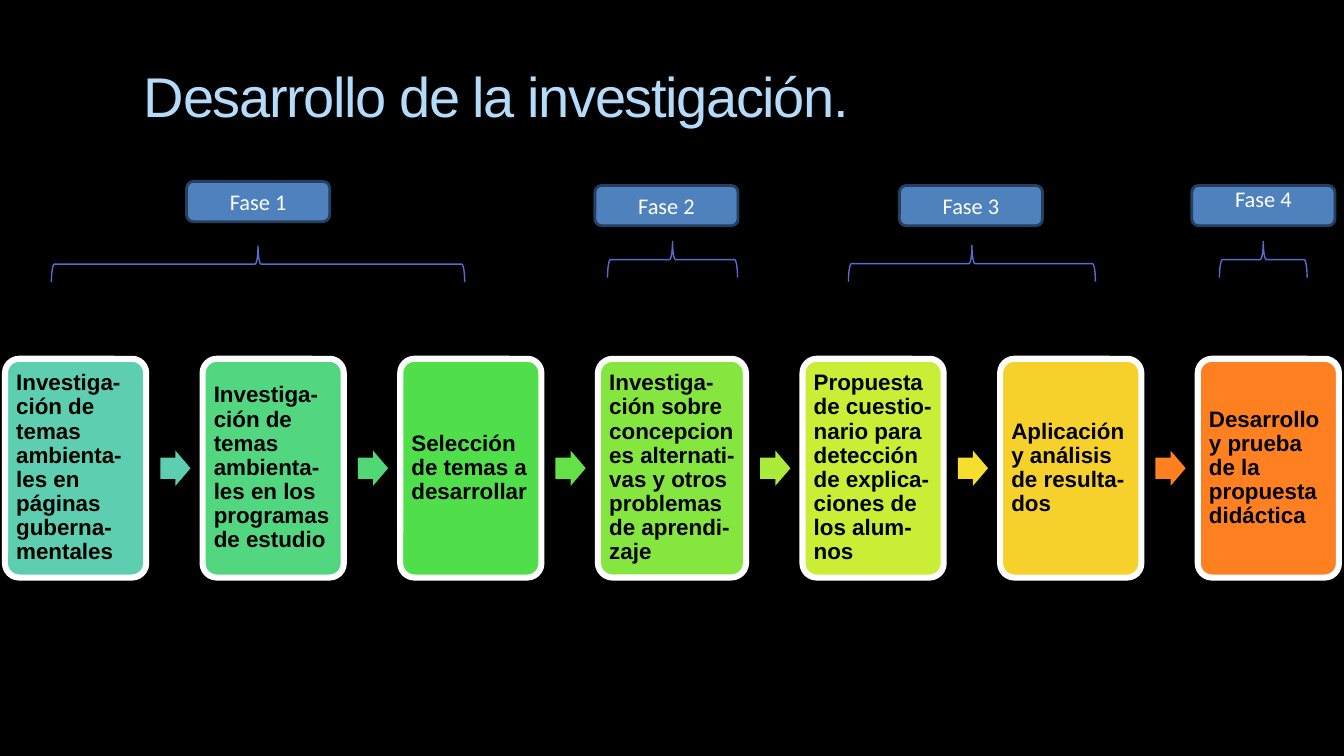
from pptx import Presentation, util as u
from pptx.dml.color import RGBColor
from pptx.enum import shapes, text

TITLE = "Desarrollo de la investigación."
STAGES = [
    ("Investiga-ción de temas ambienta-les en páginas guberna-mentales", 140, "5DCEAF", "5DCEAF"),
    ("Investiga-ción de temas ambienta-les en los programas de estudio", 140, "53D680", "51D775"),
    ("Selección de temas a desarrollar", 140, "50DE4A", "64E146"),
    ("Investiga-ción sobre concepciones alternati-vas y otros problemas de aprendi-zaje",
     147, "86E640", "ADEB3A"),
    ("Propuesta de cuestio-nario para detección de explica-ciones de los alum-nos",
     140, "CAEE36", "F5DE2D"),
    ("Aplicación y análisis de resulta-dos", 140, "F6D02B", "FF8021"),
    ("Desarrollo y prueba de la propuesta didáctica", 140, "FF8021", None),
]
PHASES = [
    ("Fase 1", 185, 180, 256, 262, 410, 0),
    ("Fase 2", 590, 184, 667, 257, 129, 0),
    ("Fase 3", 892, 184, 964, 261, 245, 0),
    ("Fase 4", 1182, 184, 1253, 257, 87, 13),
]
CARD_TOP, CARD_HEIGHT, CARD_GAP = 356, 217, 56
ARROW_OFFSET, ARROW_WIDTH, ARROW_HEIGHT = 14, 30, 35
BRACE_DEPTH = 36
SHAPE = shapes.MSO_SHAPE
MIDDLE = text.MSO_ANCHOR.MIDDLE


def px(length):
    return u.Emu(length * 9144)


def color(value):
    return RGBColor.from_string(value)


def add_box(kind, place, fill=None, line=None, adjustments=()):
    box = page.shapes.add_shape(kind, *map(px, place))
    box.shadow.inherit = False
    for index, value in enumerate(adjustments):
        box.adjustments[index] = value
    if fill:
        box.fill.solid()
        box.fill.fore_color.rgb = color(fill)
    else:
        box.fill.background()
    if line:
        box.line.color.rgb = color(line[0])
        box.line.width = u.Pt(line[1])
    else:
        box.line.fill.background()
    return box


def write(box, words, ink, insets, anchor, para_format, font_format):
    frame = box.text_frame
    frame.word_wrap = True
    frame.vertical_anchor = anchor
    for side, inset in zip(("left", "top", "right", "bottom"), insets):
        setattr(frame, f"margin_{side}", px(inset))
    para = frame.paragraphs[0]
    span = para.add_run()
    span.text = words
    span.font.color.rgb = color(ink)
    for target, values in ((para, para_format), (span.font, font_format)):
        for name, value in values.items():
            setattr(target, name, value)
    return span


deck = Presentation()
deck.slide_width, deck.slide_height = px(1333), px(750)
page = deck.slides.add_slide(deck.slide_layouts[6])
page.background.fill.solid()
page.background.fill.fore_color.rgb = color("000000")

title = page.shapes.add_textbox(*map(px, (133, 56, 1133, 100)))
title_span = write(title, TITLE, "B4DCFA", (10, 5, 10, 5), text.MSO_ANCHOR.TOP,
                   {}, {"name": "Arial", "size": u.Pt(40)})
title_span.font._element.set("spc", "-100")

left = 5
for words, width, fill, arrow_fill in STAGES:
    card = add_box(SHAPE.ROUNDED_RECTANGLE, (left, CARD_TOP, width, CARD_HEIGHT),
                   fill, ("FFFFFF", 4.33), (0.1,))
    write(card, words, "000000", (7, 7, 6, 7), MIDDLE,
          {"line_spacing": 0.9, "alignment": text.PP_ALIGN.LEFT},
          {"name": "Arial", "size": u.Pt(16), "bold": True})
    if arrow_fill:
        arrow_top = CARD_TOP + (CARD_HEIGHT - ARROW_HEIGHT) // 2
        add_box(SHAPE.RIGHT_ARROW,
                (left + width + ARROW_OFFSET, arrow_top, ARROW_WIDTH, ARROW_HEIGHT),
                arrow_fill, None, (0.6, 0.5))
    left += width + CARD_GAP

for words, label_left, label_top, center, middle, length, bottom in PHASES:
    brace = add_box(SHAPE.RIGHT_BRACE,
                    (center - BRACE_DEPTH // 2, middle - length // 2, BRACE_DEPTH, length),
                    None, ("566CD1", 1))
    brace.rotation = 270
    label = add_box(SHAPE.ROUNDED_RECTANGLE, (label_left, label_top, 142, 40),
                    "4F81BD", ("243F60", 2), (0.167,))
    write(label, words, "FFFFFF", (10, 0, 10, bottom), MIDDLE,
          {"alignment": text.PP_ALIGN.CENTER}, {"name": "Calibri", "size": u.Pt(16)})

deck.save("out.pptx")
